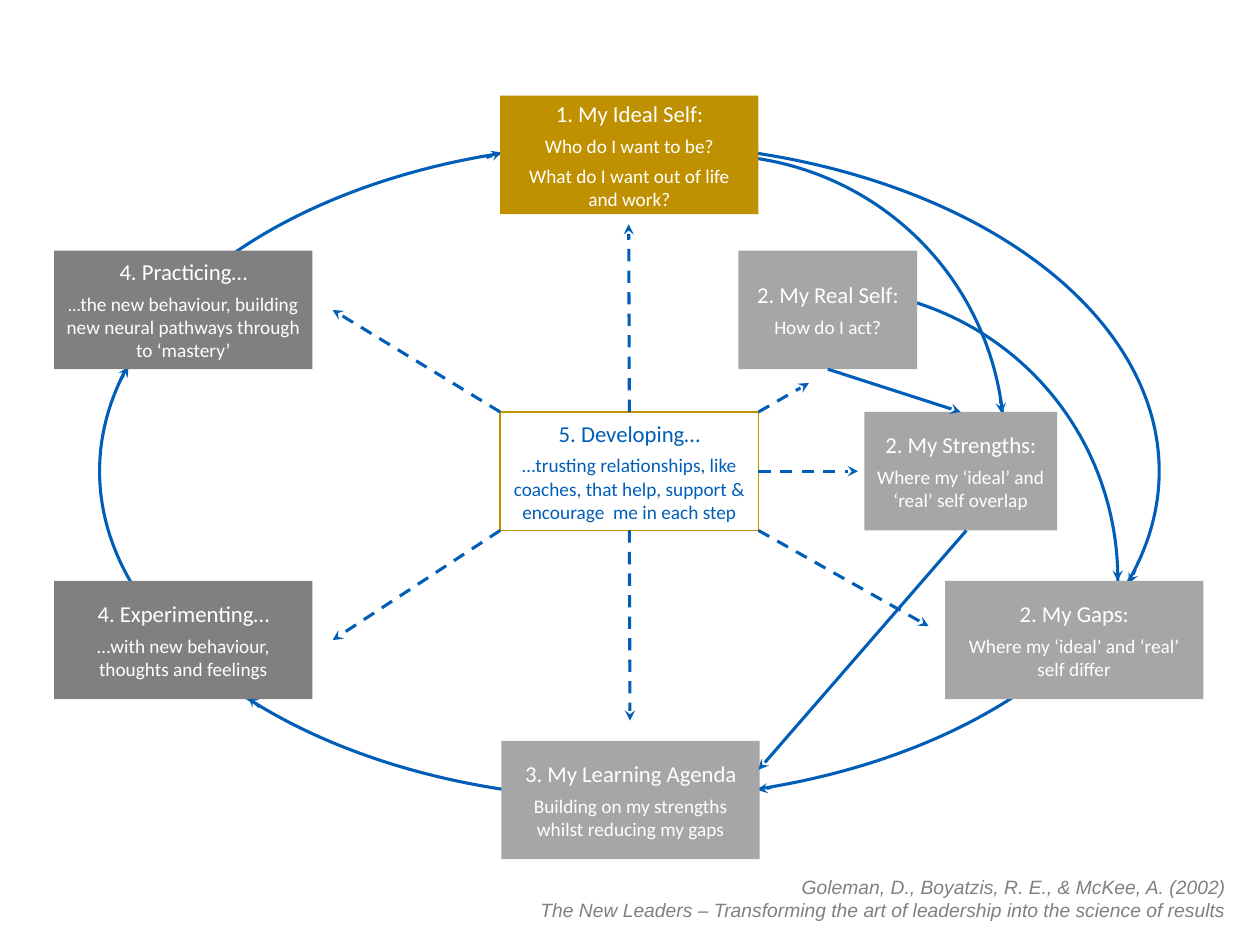
from lxml import etree
from pptx import Presentation
from pptx import util as u
from pptx.dml.color import RGBColor
from pptx.enum import dml, shapes, text
from pptx.oxml.ns import qn

BLUE, GOLD, WHITE = "005EB8", "BF9000", "FFFFFF"
GREY, DARK_GREY = "A6A6A6", "808080"
BOX_W, BOX_H = 2.05, 0.94
LEFT, CENTRE, RIGHT = 0.43, 3.97, 7.5
ROWS = (0.76, 1.99, 3.27, 4.61, 5.88)
TOP_SIDE, RIGHT_SIDE, BOTTOM_SIDE = 0, 3, 2


def rgb(value):
    return RGBColor.from_string(value)


def inches(*lengths):
    return [u.Inches(length) for length in lengths]


def write(frame, lines, sizes, font, color, align, italic=False, before=0, after=0):
    """Write one paragraph per line; the first size is for the first line."""
    frame.word_wrap = True
    for i, line in enumerate(lines):
        paragraph = frame.paragraphs[0] if i == 0 else frame.add_paragraph()
        paragraph.alignment = align
        paragraph.space_before = u.Pt(before)
        if i == 2:
            paragraph.space_after = u.Pt(after)
        run = paragraph.add_run()
        run.text = line
        run.font.size = u.Pt(sizes[min(i, len(sizes) - 1)])
        run.font.name = font
        run.font.italic = italic
        run.font.color.rgb = rgb(color)


def add_step(slide, left, top, lines, fill, width=BOX_W, color=WHITE, outline=None):
    step = slide.shapes.add_shape(shapes.MSO_SHAPE.RECTANGLE,
                                  *inches(left, top, width, BOX_H))
    step.shadow.inherit = False
    step.fill.solid()
    step.fill.fore_color.rgb = rgb(fill)
    if outline:
        step.line.color.rgb = rgb(outline)
        step.line.width = u.Pt(1)
    else:
        step.line.fill.background()
    step.text_frame.vertical_anchor = text.MSO_ANCHOR.MIDDLE
    write(step.text_frame, lines, (13, 11), "Calibri", color,
          text.PP_ALIGN.CENTER, before=4, after=4)
    return step


def add_curve(slide, kind, left, top, width, height):
    curve = slide.shapes.add_shape(kind, *inches(left, top, width, height))
    curve.shadow.inherit = False
    curve.fill.background()
    curve.line.color.rgb = rgb(BLUE)
    curve.line.width = u.Pt(1.75)
    return curve


def add_quarter_arc(slide, left, top):
    """Arc from 12 o'clock to just past 3 o'clock; both ends lie behind boxes."""
    tilt = 49
    arc = add_curve(slide, shapes.MSO_SHAPE.ARC, left, top, 4.68, 4.79)
    arc.rotation = tilt
    for i, angle in enumerate((270, 365)):
        arc.adjustments[i] = (angle - tilt) * 0.6


def add_arrow(slide, start, end, dashed=False, source=None, target=None):
    """source and target are (box, side) pairs to join the ends to."""
    arrow = slide.shapes.add_connector(shapes.MSO_CONNECTOR.STRAIGHT,
                                       *inches(*start, *end))
    if source:
        arrow.begin_connect(*source)
    if target:
        arrow.end_connect(*target)
    arrow.line.color.rgb = rgb(BLUE)
    arrow.line.width = u.Pt(1.75)
    if dashed:
        arrow.line.dash_style = dml.MSO_LINE.DASH
    properties = arrow.line._get_or_add_ln()
    etree.SubElement(properties, qn("a:tailEnd"), type="stealth")
    etree.SubElement(arrow._element.spPr, qn("a:effectLst"))


def add_cycle(slide):
    """The curves between the steps, with a short arrow where each arrives."""
    add_curve(slide, shapes.MSO_SHAPE.OVAL, 0.79, 1.14, 8.41, 5.2)
    add_quarter_arc(slide, 3.26, 1.2)
    add_quarter_arc(slide, 4.16, 2.26)
    for start, end in (
        ((3.86, 1.25), (3.98, 1.21)),
        ((9.01, 4.52), (8.96, 4.63)),
        ((6.12, 6.25), (6.01, 6.27)),
        ((2.06, 5.61), (1.97, 5.53)),
        ((0.96, 3.01), (1.02, 2.91)),
        ((7.94, 3.16), (7.95, 3.28)),
        ((8.87, 4.5), (8.87, 4.61)),
    ):
        add_arrow(slide, start, end)


def add_steps(slide):
    add_step(slide, CENTRE, ROWS[0], ["1. My Ideal Self:", "Who do I want to be?",
             "What do I want out of life and work?"], GOLD)
    practicing = add_step(slide, LEFT, ROWS[1], ["4. Practicing…",
                          "…the new behaviour, building new neural pathways "
                          "through to ‘mastery’"], DARK_GREY)
    detail = practicing.text_frame.paragraphs[1]
    detail.runs[0].text = detail.text[1:]
    ellipsis = detail.add_run()
    ellipsis.text = "…"
    ellipsis.font.size = u.Pt(10)
    ellipsis.font.name = "Calibri"
    ellipsis.font.color.rgb = rgb(WHITE)
    detail.runs[0]._r.addprevious(ellipsis._r)
    add_step(slide, LEFT, ROWS[3], ["4. Experimenting…",
             "…with new behaviour, thoughts and feelings"], DARK_GREY)
    real_self = add_step(slide, 5.86, ROWS[1], ["2. My Real Self:", "How do I act?"],
                         GREY, width=1.42)
    strengths = add_step(slide, 6.86, ROWS[2], ["2. My Strengths:",
                         "Where my ‘ideal’ and ‘real’ self overlap"], GREY, width=1.53)
    add_step(slide, RIGHT, ROWS[3], ["2. My Gaps:",
             "Where my ‘ideal’ and ‘real’ self differ"], GREY)
    add_step(slide, CENTRE + 0.01, ROWS[4], ["3. My Learning Agenda",
             "Building on my strengths whilst reducing my gaps"], GREY)
    developing = add_step(slide, CENTRE, ROWS[2], ["5. Developing…",
                          "…trusting relationships, like coaches, that help, support "
                          "& encourage  me in each step"],
                          WHITE, color=BLUE, outline=GOLD)
    return real_self, strengths, developing


def add_links(slide, real_self, strengths, developing):
    add_arrow(slide, (6.57, 2.93), (7.62, 3.27),
              source=(real_self, BOTTOM_SIDE), target=(strengths, TOP_SIDE))
    add_arrow(slide, (7.67, 4.21), (6.02, 6.11))

    right, bottom = CENTRE + BOX_W, ROWS[2] + BOX_H
    for corner, end in (
        ((CENTRE, ROWS[2]), (2.64, 2.46)),
        ((CENTRE, bottom), (2.64, 5.08)),
        ((right, ROWS[2]), (6.42, 3.04)),
        ((right, bottom), (7.37, 4.97)),
    ):
        add_arrow(slide, corner, end, dashed=True)
    for side, end in ((TOP_SIDE, (4.99, 1.78)), (BOTTOM_SIDE, (5, 5.72)),
                      (RIGHT_SIDE, (6.81, 3.74))):
        add_arrow(slide, end, end, dashed=True, source=(developing, side))


def add_citation(slide):
    citation = slide.shapes.add_textbox(*inches(1.87, 6.9, 7.96, 0.47))
    write(citation.text_frame, [
        "Goleman, D., Boyatzis, R. E., & McKee, A. (2002)",
        "The New Leaders – Transforming the art of leadership into the science of results",
    ], (11,), "Arial", DARK_GREY, text.PP_ALIGN.RIGHT, italic=True)


def main():
    deck = Presentation()
    deck.slide_width, deck.slide_height = inches(10, 7.5)
    slide = deck.slides.add_slide(deck.slide_layouts[6])
    add_cycle(slide)
    add_links(slide, *add_steps(slide))
    add_citation(slide)
    deck.save("out.pptx")


if __name__ == "__main__":
    main()
